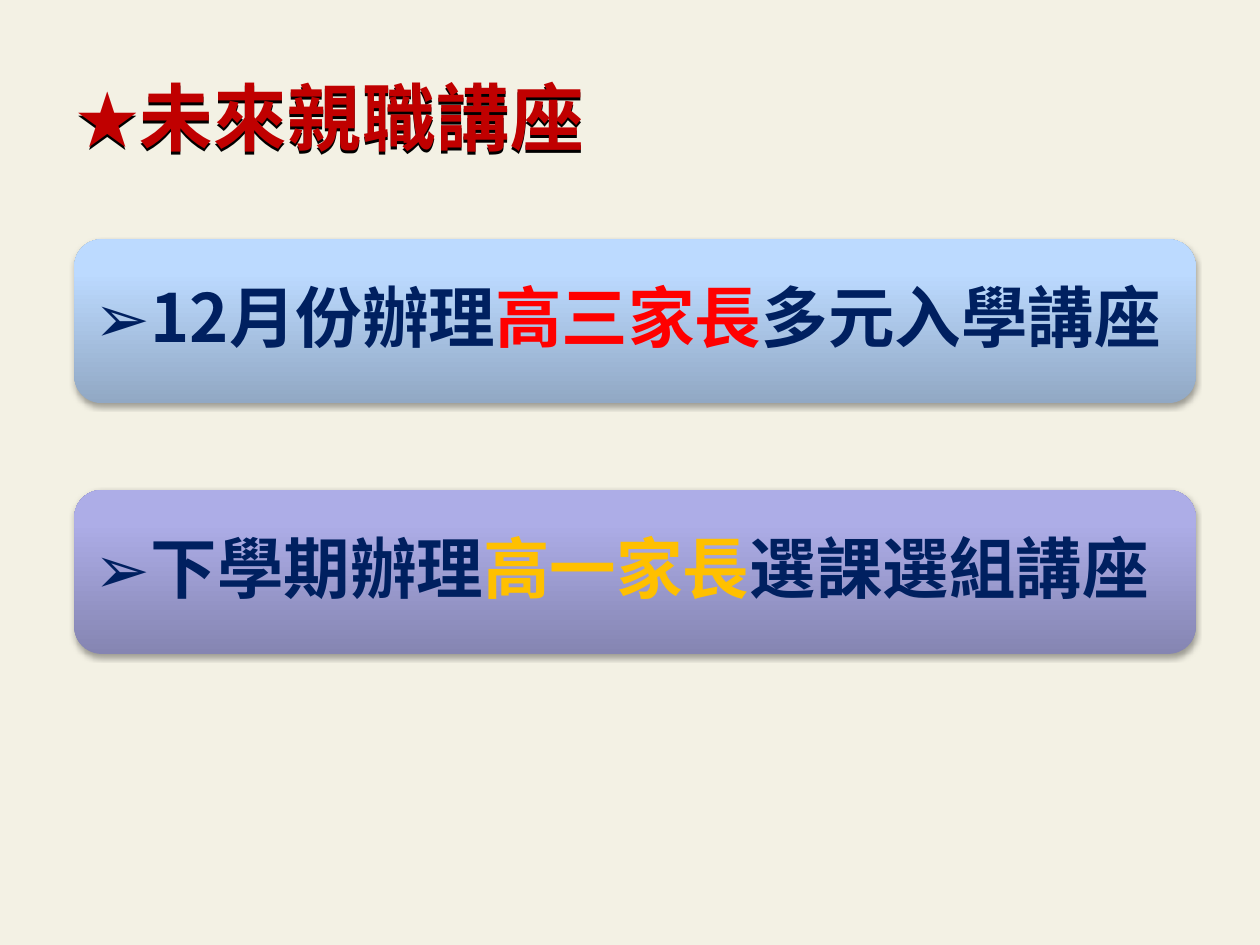
from lxml.etree import SubElement as Sub
from pptx import Presentation
from pptx.dml.color import RGBColor as RGB
from pptx.enum.shapes import MSO_SHAPE as Kind
from pptx.enum.text import MSO_ANCHOR as Anchor, MSO_AUTO_SIZE as Fit, PP_ALIGN as Align
from pptx.oxml import parse_xml
from pptx.oxml.ns import nsdecls, qn
from pptx.util import Inches, Pt

FONT = "Noto Sans CJK SC"
NS = nsdecls("a")

deck = Presentation()
deck.slide_width, deck.slide_height = Inches(10), Inches(7.5)
slide = deck.slides.add_slide(deck.slide_layouts[6])
back = slide.background.fill
back.solid()
back.fore_color.rgb = RGB.from_string("F3F1E4")


def add_run(para, text, size, color):
    run = para.add_run()
    run.text = text
    style = {"name": FONT, "size": Pt(size), "bold": True}
    for key, value in style.items():
        setattr(run.font, key, value)
    run.font.color.rgb = RGB.from_string(color)
    props = run.font._element
    Sub(props, qn("a:ea"), typeface=FONT)
    return props


def shadow(blur, dist, alpha):
    return parse_xml(
        f'<a:effectLst {NS}><a:outerShdw blurRad="{Pt(blur)}" dist="{Pt(dist)}" '
        f'dir="5400000" rotWithShape="0"><a:srgbClr val="000000">'
        f'<a:alpha val="{alpha * 1000}"/></a:srgbClr></a:outerShdw></a:effectLst>')


# Title with a star bullet
title = slide.shapes.add_textbox(Inches(0.51), Inches(0.52), Inches(4.3), Inches(0.81))
title._element.spPr.append(shadow(0, 2, 100))
title.text_frame.word_wrap = False
title.text_frame.auto_size = Fit.SHAPE_TO_FIT_TEXT
para = title.text_frame.paragraphs[0]
para.alignment = Align.LEFT
bullet = para._p.get_or_add_pPr()
Sub(bullet, qn("a:buSzPct"), val="85000")
Sub(bullet, qn("a:buFont"), typeface=FONT)
Sub(bullet, qn("a:buChar"), char="★")
add_run(para, "未來親職講座", 42, "C00000").set("spc", "50")

# Talk cards, one per row
TOP, STEP = 1.9, 1.99
cards = [
    (("91A8C4", "BCDAFF", "BEDBFF"), "FF0000",
     ("➢12月份辦理", "高三家長", "多元入學講座")),
    (("8585B2", "ADADE7", "ACACE9"), "FFC000",
     ("➢下學期辦理", "高一家長", "選課選組講座")),
]
for row, (shades, accent, words) in enumerate(cards):
    card = slide.shapes.add_shape(
        Kind.ROUNDED_RECTANGLE, Inches(0.59), Inches(TOP + row * STEP),
        Inches(8.9), Inches(1.3))
    stops = "".join(
        f'<a:gs pos="{pos * 1000}"><a:srgbClr val="{shade}"/></a:gs>'
        for pos, shade in zip((0, 80, 100), shades))
    shape = card._element.spPr
    shape.append(parse_xml(
        f'<a:gradFill {NS} rotWithShape="1"><a:gsLst>{stops}</a:gsLst>'
        '<a:lin ang="16200000" scaled="0"/></a:gradFill>'))
    card.line.fill.background()
    shape.append(shadow(3.1, 1.8, 35))

    frame = card.text_frame
    layout = {"word_wrap": True, "vertical_anchor": Anchor.MIDDLE}
    layout |= {f"margin_{side}": Inches(0.1) for side in ("left", "right", "top", "bottom")}
    for key, value in layout.items():
        setattr(frame, key, value)
    para = frame.paragraphs[0]
    para.alignment = Align.LEFT
    para.line_spacing = 0.9
    for text, color in zip(words, ("002060", accent, "002060")):
        add_run(para, text, 38, color)

deck.save("out.pptx")
